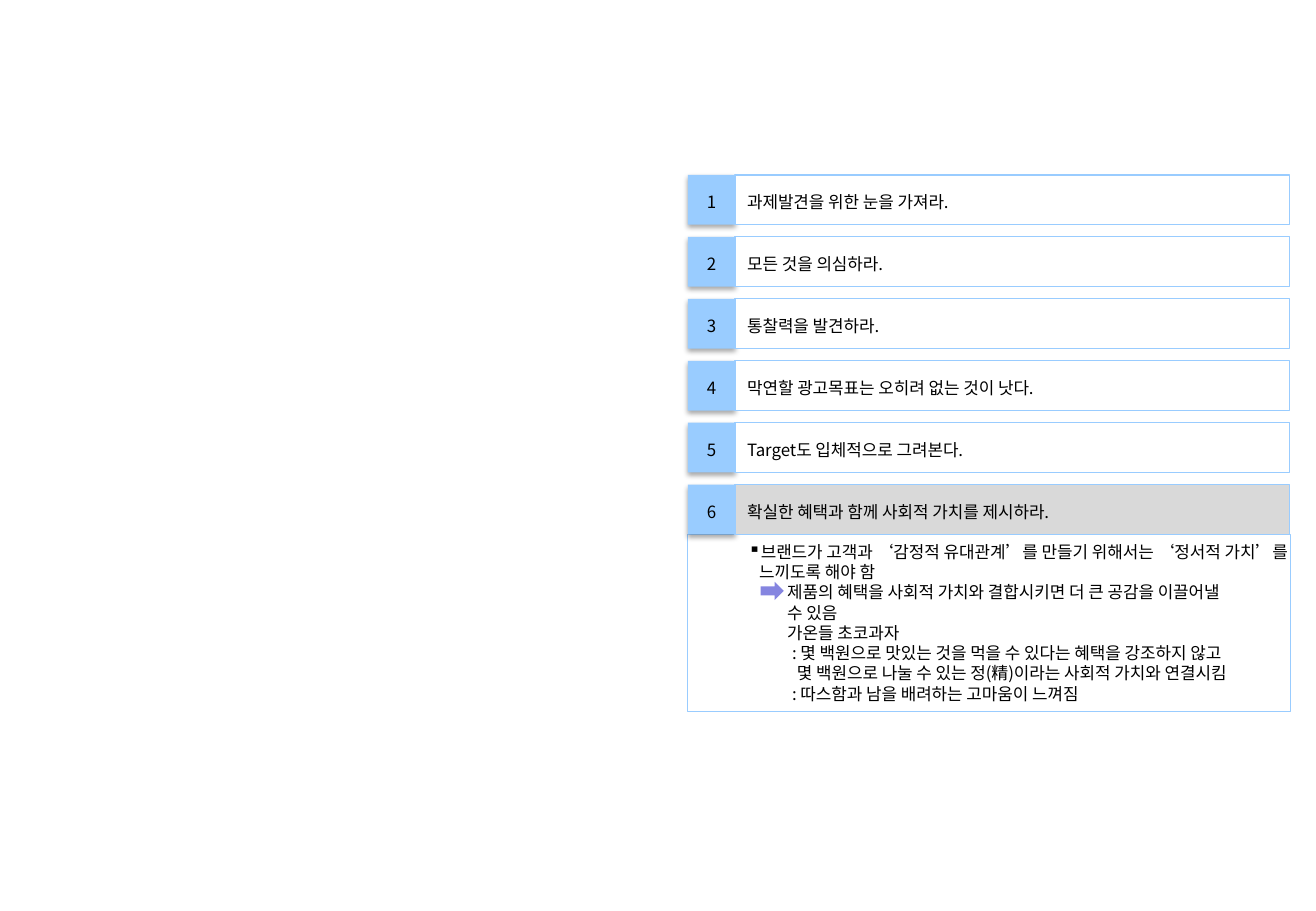
from lxml import etree
from pptx import Presentation
from pptx.dml.color import RGBColor
from pptx.enum.shapes import MSO_SHAPE as Shape
from pptx.enum.text import MSO_ANCHOR as Anchor, MSO_AUTO_SIZE as AutoSize, PP_ALIGN as Align
from pptx.oxml import parse_xml
from pptx.oxml.ns import nsdecls, qn
from pptx.util import Inches, Pt

FONT = "Noto Sans CJK KR"
BLACK = RGBColor(0x00, 0x00, 0x00)
WHITE = RGBColor(0xFF, 0xFF, 0xFF)
GRAY = RGBColor(0xD9, 0xD9, 0xD9)
SKY = RGBColor(0x99, 0xCC, 0xFF)
VIOLET = RGBColor(0x85, 0x85, 0xE0)

RULES = [
    "과제발견을 위한 눈을 가져라.",
    "모든 것을 의심하라.",
    "통찰력을 발견하라.",
    "막연할 광고목표는 오히려 없는 것이 낫다.",
    "Target도 입체적으로 그려본다.",
    "확실한 혜택과 함께 사회적 가치를 제시하라.",
]
ROW_PITCH, ROW_HEIGHT, NUMBER_WIDTH = 0.51, 0.41, 0.39

# Left margin in inches, text
DETAILS = [
    (0.09, "브랜드가 고객과 ‘감정적 유대관계’를 만들기 위해서는 ‘정서적 가치’를 느끼도록 해야 함"),
    (0.32, "제품의 혜택을 사회적 가치와 결합시키면 더 큰 공감을 이끌어낼\v수 있음"),
    (0.32, "가온들 초코과자"),
    (0.36, ": 몇 백원으로 맛있는 것을 먹을 수 있다는 혜택을 강조하지 않고"),
    (0.40, "몇 백원으로 나눌 수 있는 정(精)이라는 사회적 가치와 연결시킴"),
    (0.36, ": 따스함과 남을 배려하는 고마움이 느껴짐"),
]


def style_text(para):
    for span in para.runs:
        span.font.size = Pt(10)
        span.font.name = FONT
        span.font.color.rgb = BLACK
        east_asian = etree.SubElement(span.font._element, qn("a:ea"))
        east_asian.set("typeface", FONT)


def add_box(page, kind, left, top, width, height, fill, line=None):
    box = page.shapes.add_shape(kind, Inches(left), Inches(top), Inches(width), Inches(height))
    box.shadow.inherit = False
    box.fill.solid()
    box.fill.fore_color.rgb = fill
    if line is None:
        box.line.fill.background()
    else:
        box.line.color.rgb = line
        box.line.width = Pt(0.75)
    return box


def add_label(page, left, top, width, text, align, fill, line=None):
    box = add_box(page, Shape.ROUNDED_RECTANGLE, left, top, width, ROW_HEIGHT, fill, line)
    box.adjustments[0] = 0
    frame = box.text_frame
    frame.word_wrap = True
    frame.vertical_anchor = Anchor.MIDDLE
    frame.text = text
    para = frame.paragraphs[0]
    para.alignment = align
    para.line_spacing = 1.2
    style_text(para)
    return box


def add_drop_shadow(box):
    effects = box._element.spPr.find(qn("a:effectLst"))
    effects.append(parse_xml(
        f'<a:outerShdw {nsdecls("a")} blurRad="{Pt(3.1)}" dist="{Pt(1.8)}" dir="5400000" '
        'algn="t" rotWithShape="0"><a:srgbClr val="000000"><a:alpha val="35000"/>'
        '</a:srgbClr></a:outerShdw>'))


def add_rules(page, left, top, width):
    for index, rule in enumerate(RULES):
        row_top = top + index * ROW_PITCH
        number = add_label(page, left, row_top, NUMBER_WIDTH, str(index + 1), Align.CENTER, SKY)
        add_drop_shadow(number)
        fill = GRAY if index == len(RULES) - 1 else WHITE
        add_label(page, left + NUMBER_WIDTH, row_top, width - NUMBER_WIDTH, rule,
                  Align.LEFT, fill, SKY)


def add_details(page, left, top, width, height):
    add_box(page, Shape.RECTANGLE, left, top, width, height, WHITE, SKY)
    text_box = page.shapes.add_textbox(Inches(left + 0.4), Inches(top + 0.01),
                                       Inches(width - 0.23), Inches(height - 0.01))
    frame = text_box.text_frame
    frame.word_wrap = True
    frame.auto_size = AutoSize.SHAPE_TO_FIT_TEXT
    for index, (margin, text) in enumerate(DETAILS):
        para = frame.add_paragraph() if index else frame.paragraphs[0]
        para.text = text
        para.line_spacing = Pt(12)
        properties = para._p.get_or_add_pPr()
        properties.set("marL", str(Inches(margin)))
        if index == 0:
            properties.set("indent", str(-Inches(margin)))
            bullet = etree.SubElement(properties, qn("a:buChar"))
            bullet.set("char", "▪")
        style_text(para)
    # Arrow before the conclusion
    add_box(page, Shape.RIGHT_ARROW, left + 0.6, top + 0.39, 0.19, 0.15, VIOLET)


def main():
    deck = Presentation()
    deck.slide_width, deck.slide_height = Inches(10.83), Inches(7.5)
    page = deck.slides.add_slide(deck.slide_layouts[6])
    add_details(page, 5.66, 4.4, 4.96, 1.46)
    add_rules(page, 5.66, 1.44, 4.95)
    deck.save("out.pptx")


if __name__ == "__main__":
    main()
